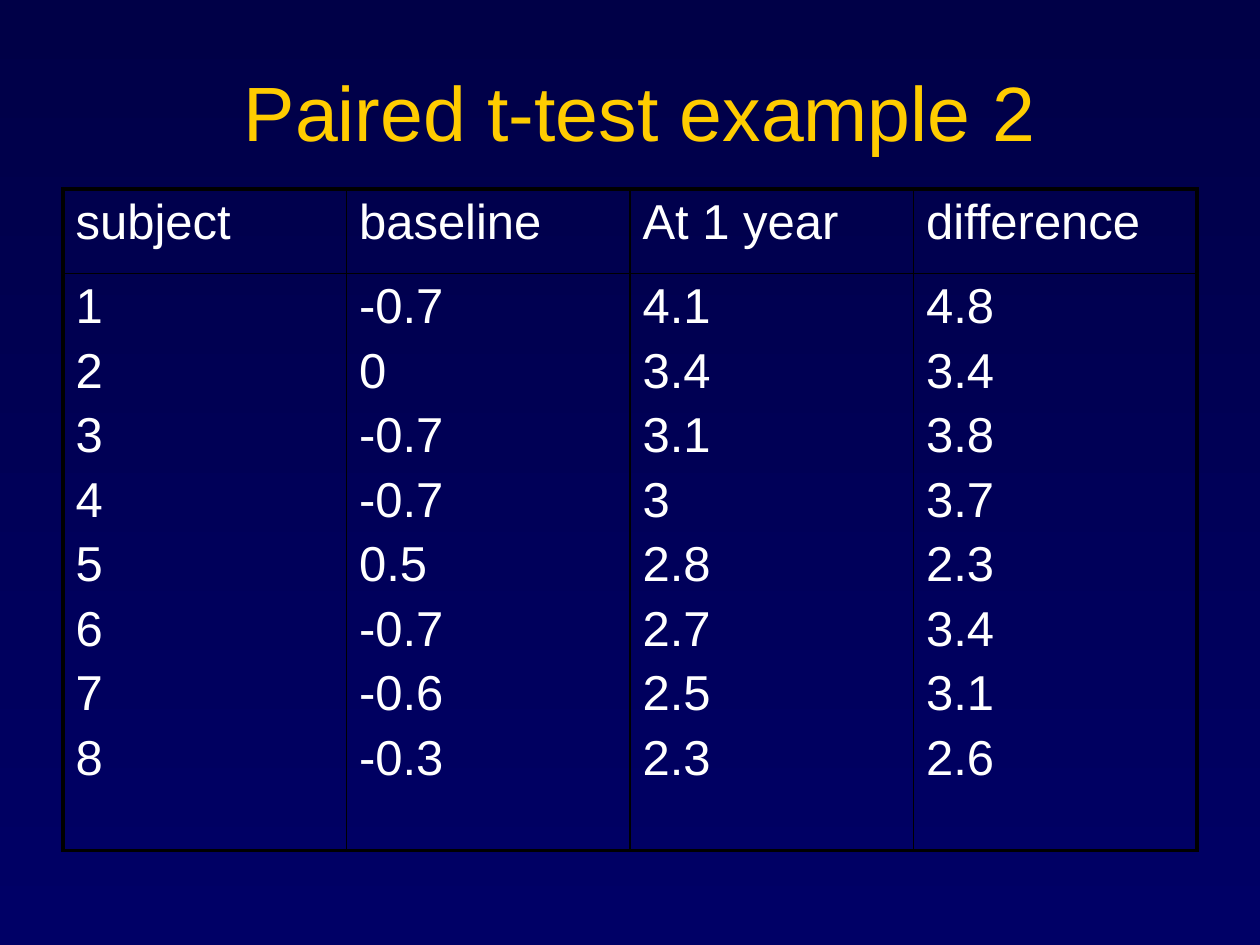
from pptx import Presentation
from pptx.dml.color import RGBColor as RGB
from pptx.enum.text import MSO_ANCHOR as ANCHOR, PP_ALIGN as ALIGN
from pptx.oxml import parse_xml
from pptx.oxml.ns import nsdecls
from pptx.util import Inches, Pt

COLORS = {"top": "000047", "bottom": "000066", "title": "FFCC00",
          "text": "FFFFFF", "border": "000000"}
COLUMNS = {
    "subject": ["1", "2", "3", "4", "5", "6", "7", "8"],
    "baseline": ["-0.7", "0", "-0.7", "-0.7", "0.5", "-0.7", "-0.6", "-0.3"],
    "At 1 year": ["4.1", "3.4", "3.1", "3", "2.8", "2.7", "2.5", "2.3"],
    "difference": ["4.8", "3.4", "3.8", "3.7", "2.3", "3.4", "3.1", "2.6"],
}


def add_text(p, text, size, color):
    r = p.add_run()
    r.text = text
    for name, value in {"name": "Arial", "size": Pt(size)}.items():
        setattr(r.font, name, value)
    r.font.color.rgb = RGB.from_string(COLORS[color])


def set_borders(cell, widths):
    for i, (side, width) in enumerate(widths.items()):
        cell._tc.get_or_add_tcPr().insert(i, parse_xml(
            f'<a:ln{side} {nsdecls("a")} w="{Pt(width)}"><a:solidFill>'
            f'<a:srgbClr val="{COLORS["border"]}"/></a:solidFill></a:ln{side}>'))


prs = Presentation()
prs.slide_width, prs.slide_height = Inches(10), Inches(7.5)
s = prs.slides.add_slide(prs.slide_layouts[6])

# Background gradient, top to bottom
fill = s.background.fill
fill.gradient()
fill.gradient_angle = 270
for stop, position, name in zip(fill.gradient_stops, (0, 1), ("top", "bottom")):
    stop.position = position
    stop.color.rgb = RGB.from_string(COLORS[name])

# Title
sp = s.shapes.add_textbox(Inches(0.58), Inches(0.25), Inches(9), Inches(1.25))
tf = sp.text_frame
tf.word_wrap = True
tf.vertical_anchor = ANCHOR.MIDDLE
p = tf.paragraphs[0]
p.alignment = ALIGN.CENTER
add_text(p, "Paired t-test example 2", 44, "title")

# Table: a heading row, then one tall cell of values per column
heights = [0.67, 4.58]
table = s.shapes.add_table(len(heights), len(COLUMNS), Inches(0.5), Inches(1.5),
                           Inches(9), Inches(sum(heights))).table
table.first_row = table.horz_banding = False
for row, height in zip(table.rows, heights):
    row.height = Inches(height)

outer, inner = 2.25, 1
last = len(COLUMNS) - 1
for col, (heading, values) in enumerate(COLUMNS.items()):
    table.columns[col].width = Inches(2.25)
    for row, lines in enumerate([[heading], values]):
        cell = table.cell(row, col)
        cell.fill.background()
        set_borders(cell, {"L": outer if col == 0 else inner,
                           "R": outer if col == last else inner,
                           "T": outer if row == 0 else inner,
                           "B": outer if row == 1 else inner})
        tf = cell.text_frame
        for i, line in enumerate(lines):
            p = tf.add_paragraph() if i else tf.paragraphs[0]
            if i:
                p.space_before = Pt(5.6)
            add_text(p, line, 28, "text")

prs.save("out.pptx")
